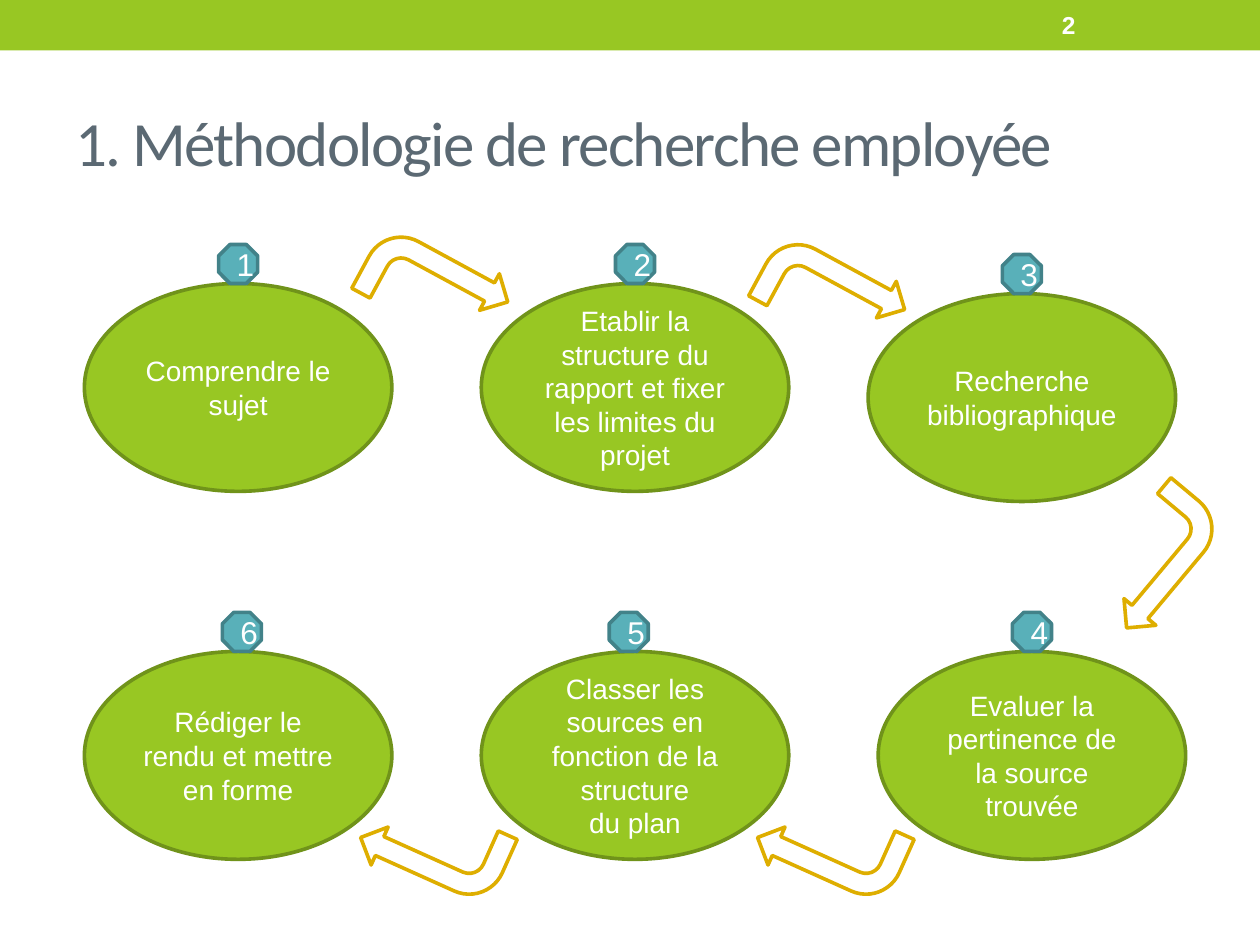
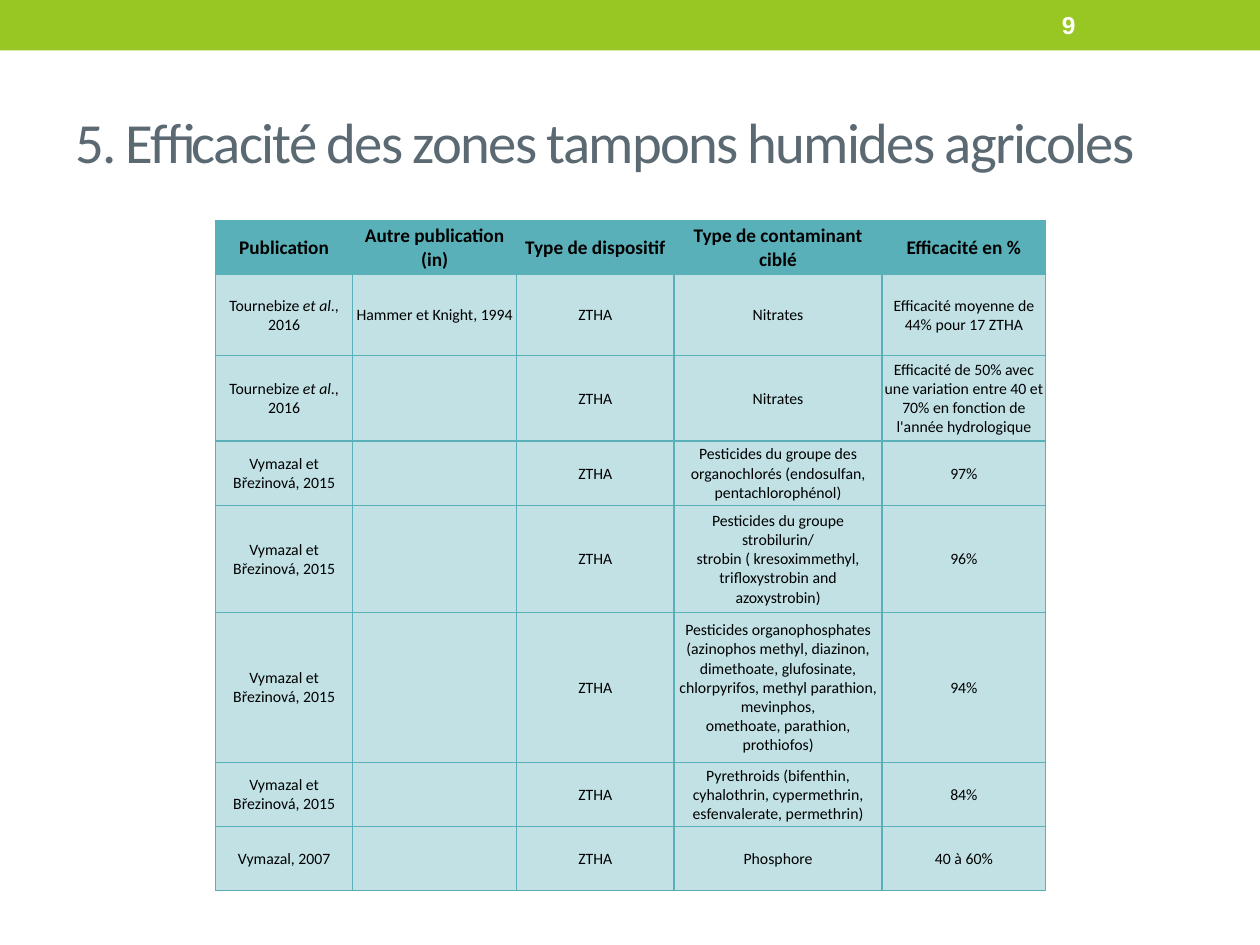
from dataclasses import dataclass

from lxml import etree
from pptx import Presentation
from pptx import util as u
from pptx.dml.color import RGBColor
from pptx.enum import shapes, text
from pptx.oxml import ns


@dataclass(frozen=True)
class Theme:
    green: str = "98C723"
    green_edge: str = "70931A"
    teal: str = "59B0B9"
    teal_edge: str = "428289"
    teal_pale: str = "C1E1E5"
    gold: str = "DEAE00"
    slate: str = "5B6973"
    white: str = "FFFFFF"
    black: str = "000000"
    heading_font: str = "Calibri"
    body_font: str = "Arial"
    number_size: float = 14
    step_size: float = 16
    badge_size: float = 18
    header_size: float = 11
    cell_size: float = 9
    outline: float = 2.08
    border: float = 0.75


THEME = Theme()

# Method slide: step text lines, ellipse left and top, sideways badge shift
METHOD_TITLE = ("1. Méthodologie de recherche employée", 36)
STEPS = [
    (["Comprendre le sujet"], 0.67, 2.25, 0),
    (["Etablir la structure du rapport et fixer les limites du projet"], 3.82, 2.25, 0),
    (["Recherche bibliographique"], 6.89, 2.33, 0),
    (["Evaluer la pertinence de la source trouvée"], 6.97, 5.17, 0),
    (["Classer les sources en fonction de la structure", "du plan"], 3.82, 5.17, -0.05),
    (["Rédiger le rendu et mettre en forme"], 0.67, 5.17, 0.03),
]
STEP_WIDTH, STEP_HEIGHT, BADGE = 2.44, 1.65, 0.31

# Arrows from step to step: left, top, rotation
ARROWS = [
    (2.88, 1.94, 28.5),
    (6.03, 2.0, 28.5),
    (8.61, 4.11, 129.9),
    (6.03, 6.4, 204.2),
    (2.88, 6.4, 204.2),
]
ARROW_WIDTH, ARROW_HEIGHT = 1.14, 0.66

# Efficiency slide: a cell is a list of (words, italic) runs or a plain string
EFFICIENCY_TITLE = ("5. Efficacité des zones tampons humides agricoles", 32.4)
TOURNEBIZE = [("Tournebize ", False), ("et al", True), ("., 2016", False)]
VYMAZAL = "Vymazal et Březinová, 2015"
DEVICE = "ZTHA"
HEADERS = ["Publication", "Autre publication (in)", "Type de dispositif",
           "Type de contaminant ciblé", "Efficacité en %"]
STUDIES = [
    (TOURNEBIZE, "Hammer et Knight, 1994", "Nitrates",
     "Efficacité moyenne de 44% pour 17 ZTHA"),
    (TOURNEBIZE, "", "Nitrates",
     "Efficacité de 50% avec une variation entre 40 et 70% en fonction de "
     "l'année hydrologique"),
    (VYMAZAL, "",
     "Pesticides du groupe des organochlorés (endosulfan, pentachlorophénol)", "97%"),
    (VYMAZAL, "",
     "Pesticides du groupe strobilurin/\nstrobin ( kresoximmethyl, "
     "trifloxystrobin and azoxystrobin)", "96%"),
    (VYMAZAL, "",
     "Pesticides organophosphates (azinophos methyl, diazinon,\n"
     "dimethoate, glufosinate, chlorpyrifos, methyl parathion, mevinphos,\n"
     "omethoate, parathion, prothiofos)", "94%"),
    (VYMAZAL, "",
     "Pyrethroids (bifenthin,\ncyhalothrin, cypermethrin, esfenvalerate, permethrin)",
     "84%"),
    ("Vymazal, 2007", "", "Phosphore", "40 à 60%"),
]
COLUMN_WIDTHS = [1.09, 1.3, 1.25, 1.65, 1.3]
ROW_HEIGHTS = [0.43, 0.64, 0.68, 0.51, 0.85, 1.19, 0.51, 0.51]
TABLE_LEFT, TABLE_TOP = 1.71, 1.75


def inches(*lengths):
    return [u.Inches(length) for length in lengths]


def color(code):
    return RGBColor.from_string(code)


def add_span(para, words, font, size, code, bold=False, italic=False):
    span = para.add_run()
    span.text = words
    span.font.name, span.font.size = font, u.Pt(size)
    span.font.color.rgb = color(code)
    span.font.bold, span.font.italic = bold, italic
    return span


def add_label(page, area, words, font, size, code, bold=False):
    box = page.shapes.add_textbox(*inches(*area))
    frame = box.text_frame
    frame.word_wrap = True
    frame.vertical_anchor = text.MSO_ANCHOR.MIDDLE
    return add_span(frame.paragraphs[0], words, font, size, code, bold)


def add_figure(page, kind, area, fill, edge=None, lines=(), size=0):
    """Preset shape with an optional outline and centred white text."""
    figure = page.shapes.add_shape(kind, *inches(*area))
    figure.shadow.inherit = False
    figure.fill.solid()
    figure.fill.fore_color.rgb = color(fill)
    if edge:
        figure.line.color.rgb = color(edge)
        figure.line.width = u.Pt(THEME.outline)
    else:
        figure.line.fill.background()
    frame = figure.text_frame
    frame.vertical_anchor = text.MSO_ANCHOR.MIDDLE
    for index, line in enumerate(lines):
        para = frame.add_paragraph() if index else frame.paragraphs[0]
        para.alignment = text.PP_ALIGN.CENTER
        add_span(para, line, THEME.body_font, size, THEME.white)
    return figure


def add_page(deck, title, number):
    """Blank page with the shared band, title and page number."""
    page = deck.slides.add_slide(deck.slide_layouts[6])
    add_figure(page, shapes.MSO_SHAPE.RECTANGLE, (0, 0, 10, 0.4), THEME.green)
    words, size = title
    span = add_label(page, (0.5, 0.58, 9, 1.08), words, THEME.heading_font, size, THEME.slate)
    span.font._element.set("spc", "-100")
    add_label(page, (8.33, 0.02, 1.17, 0.36), number, THEME.body_font,
              THEME.number_size, THEME.white, bold=True)
    return page


def add_borders(cell):
    """Same thin line on all four sides, placed before the cell fill."""
    properties = cell._tc.get_or_add_tcPr()
    for index, side in enumerate(("lnL", "lnR", "lnT", "lnB")):
        line = etree.Element(ns.qn(f"a:{side}"), w=str(u.Pt(THEME.border)))
        fill = etree.SubElement(line, ns.qn("a:solidFill"))
        etree.SubElement(fill, ns.qn("a:srgbClr"), val=THEME.teal)
        properties.insert(index, line)


def fill_cell(cell, content, header):
    cell.margin_left, cell.margin_top, cell.margin_right, cell.margin_bottom = inches(
        0.01, 0.01, 0.01, 0)
    cell.vertical_anchor = text.MSO_ANCHOR.MIDDLE
    cell.fill.solid()
    cell.fill.fore_color.rgb = color(THEME.teal if header else THEME.teal_pale)
    add_borders(cell)
    para = cell.text_frame.paragraphs[0]
    para.alignment = text.PP_ALIGN.CENTER
    size = THEME.header_size if header else THEME.cell_size
    spans = [(content, False)] if isinstance(content, str) else content
    for words, italic in spans:
        for index, line in enumerate(words.split("\n")):
            if index:
                para.add_line_break()
            if line:
                add_span(para, line, THEME.heading_font, size, THEME.black, header, italic)


def build_method(deck):
    page = add_page(deck, METHOD_TITLE, "2")
    # Steps, each with its number resting on top
    for number, (lines, left, top, shift) in enumerate(STEPS, 1):
        add_figure(page, shapes.MSO_SHAPE.OVAL, (left, top, STEP_WIDTH, STEP_HEIGHT),
                   THEME.green, THEME.green_edge, lines, THEME.step_size)
        badge_left = left + (STEP_WIDTH - BADGE) / 2 + shift
        add_figure(page, shapes.MSO_SHAPE.OCTAGON, (badge_left, top - BADGE, BADGE, BADGE),
                   THEME.teal, THEME.teal_edge, [str(number)], THEME.badge_size)
    # Arrows between the steps
    for left, top, rotation in ARROWS:
        arrow = add_figure(page, shapes.MSO_SHAPE.BENT_ARROW,
                           (left, top, ARROW_WIDTH, ARROW_HEIGHT), THEME.white, THEME.gold)
        arrow.rotation = rotation


def build_efficiency(deck):
    page = add_page(deck, EFFICIENCY_TITLE, "9")
    rows = [HEADERS] + [(source, other, DEVICE, target, result)
                        for source, other, target, result in STUDIES]
    table = page.shapes.add_table(
        len(rows), len(HEADERS),
        *inches(TABLE_LEFT, TABLE_TOP, sum(COLUMN_WIDTHS), sum(ROW_HEIGHTS))).table
    for column, width in zip(table.columns, COLUMN_WIDTHS):
        column.width = u.Inches(width)
    for index, (row, height, contents) in enumerate(zip(table.rows, ROW_HEIGHTS, rows)):
        row.height = u.Inches(height)
        for cell, content in zip(row.cells, contents):
            fill_cell(cell, content, header=index == 0)


def main():
    deck = Presentation()
    deck.slide_width, deck.slide_height = inches(10, 7.5)
    build_method(deck)
    build_efficiency(deck)
    deck.save("out.pptx")


if __name__ == "__main__":
    main()
